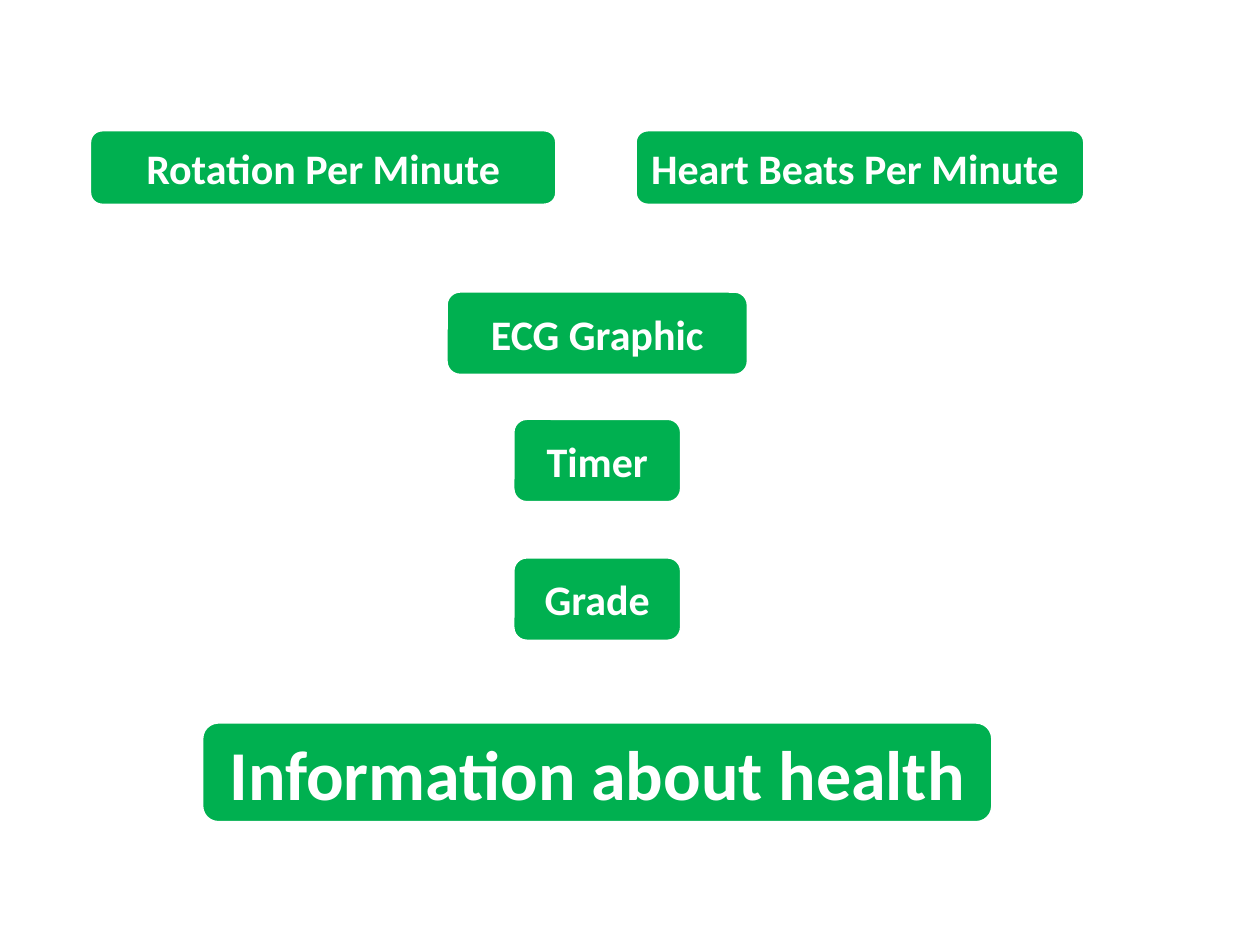
from pptx import Presentation
from pptx.dml.color import RGBColor
from pptx.enum.shapes import MSO_SHAPE
from pptx.enum.text import MSO_ANCHOR, PP_ALIGN
from pptx.util import Inches, Pt

GREEN = RGBColor(0x00, 0xB0, 0x50)
WHITE = RGBColor(0xFF, 0xFF, 0xFF)
MID = 4.74  # centre line of the stacked labels

# text, left, width
TOP_ROW = [
    ("Rotation Per Minute", 0.71, 3.71, PP_ALIGN.CENTER),
    ("Heart Beats Per Minute", 5.04, 3.57, PP_ALIGN.LEFT),
]
# text, top, width, height, font size
STACK = [
    ("ECG Graphic", 2.31, 2.4, 0.67, 24),
    ("Timer", 3.32, 1.34, 0.67, 24),
    ("Grade", 4.42, 1.34, 0.67, 24),
    ("Information about health", 5.73, 6.28, 0.8, 40),
]


def add_label(slide, text, left, top, width, height, size=24,
              align=PP_ALIGN.CENTER):
    label = slide.shapes.add_shape(
        MSO_SHAPE.ROUNDED_RECTANGLE,
        Inches(left), Inches(top), Inches(width), Inches(height))
    label.shadow.inherit = False
    label.fill.solid()
    label.fill.fore_color.rgb = GREEN
    label.line.color.rgb = WHITE
    label.line.width = Pt(2)
    frame = label.text_frame
    frame.word_wrap = True
    frame.vertical_anchor = MSO_ANCHOR.MIDDLE
    para = frame.paragraphs[0]
    para.alignment = align
    run = para.add_run()
    run.text = text
    run.font.name = "Calibri"
    run.font.size = Pt(size)
    run.font.bold = True
    run.font.color.rgb = WHITE


def main():
    deck = Presentation()
    deck.slide_width, deck.slide_height = Inches(10), Inches(7.5)
    slide = deck.slides.add_slide(deck.slide_layouts[6])
    for text, left, width, align in TOP_ROW:
        add_label(slide, text, left, 1.03, width, 0.6, align=align)
    for text, top, width, height, size in STACK:
        add_label(slide, text, MID - width / 2, top, width, height, size)
    deck.save("out.pptx")


if __name__ == "__main__":
    main()
